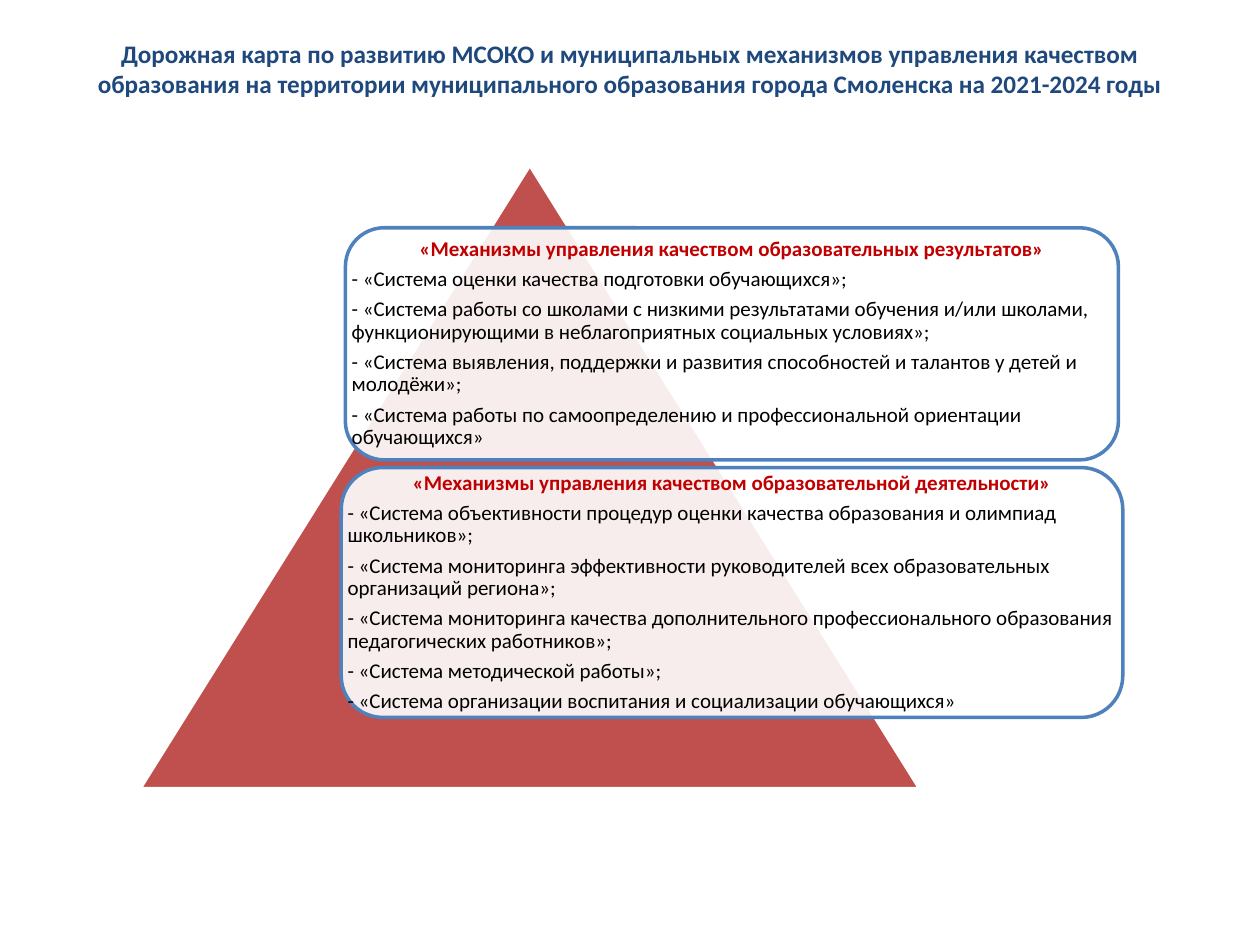
from pptx import Presentation
from pptx.dml.color import RGBColor
from pptx.enum.shapes import MSO_SHAPE
from pptx.enum.text import MSO_ANCHOR, MSO_AUTO_SIZE, PP_ALIGN
from pptx.oxml.ns import qn
from pptx.util import Pt
from lxml.etree import SubElement

HEADING = (
    "Дорожная карта по развитию МСОКО и муниципальных механизмов управления качеством "
    "образования на территории муниципального образования города Смоленска на 2021-2024 годы"
)
MECHANISMS = [
    {
        "box": (197.4, 130.2, 441.7, 132.6),
        "name": "«Механизмы управления качеством образовательных результатов»",
        "systems": [
            "«Система оценки качества подготовки обучающихся»;",
            "«Система работы со школами с низкими результатами обучения и/или школами, "
            "функционирующими в неблагоприятных социальных условиях»;",
            "«Система выявления, поддержки и развития способностей и талантов у детей и молодёжи»;",
            "«Система работы по самоопределению и профессиональной ориентации обучающихся»",
        ],
    },
    {
        "box": (195, 267.2, 446.6, 142.8),
        "name": "«Механизмы управления качеством образовательной деятельности»",
        "systems": [
            "«Система объективности процедур оценки качества образования и олимпиад школьников»;",
            "«Система мониторинга эффективности руководителей всех образовательных "
            "организаций региона»;",
            "«Система мониторинга качества дополнительного профессионального образования "
            "педагогических работников»;",
            "«Система методической работы»;",
            "«Система организации воспитания и социализации обучающихся»",
        ],
    },
]
HEADING_BOX = (36, 21.6, 648, 49.7)
PYRAMID_BOX = (79.9, 94.3, 445.7, 356.4)

THEME = {
    "font": "Calibri",
    "heading": RGBColor(0x1F, 0x49, 0x7D),
    "pyramid": RGBColor(0xC0, 0x50, 0x4D),
    "border": RGBColor(0x4F, 0x81, 0xBD),
    "mechanism": RGBColor(0xC0, 0x00, 0x00),
    "system": RGBColor(0, 0, 0),
    "white": RGBColor(0xFF, 0xFF, 0xFF),
    "heading_size": 14.4,
    "body_size": 12,
    "line_width": 2,
    "panel_opacity": 90,
}


def in_points(box):
    return [Pt(length) for length in box]


def write(paragraph, text, *, size, color, bold=False, align=PP_ALIGN.LEFT, spacing=1, after=0):
    paragraph.alignment = align
    paragraph.line_spacing = spacing
    paragraph.space_before = Pt(0)
    paragraph.space_after = Pt(after)
    run = paragraph.add_run()
    run.text = text
    run.font.name = THEME["font"]
    run.font.size = Pt(size)
    run.font.bold = bold
    run.font.color.rgb = color


def set_frame(frame, *, anchor, side, vertical):
    frame.word_wrap = True
    frame.auto_size = MSO_AUTO_SIZE.NONE
    frame.vertical_anchor = anchor
    frame.margin_left = frame.margin_right = Pt(side)
    frame.margin_top = frame.margin_bottom = Pt(vertical)


def add_figure(slide, preset, box, *, fill, line, opacity=100):
    figure = slide.shapes.add_shape(preset, *in_points(box))
    figure.shadow.inherit = False
    figure.fill.solid()
    figure.fill.fore_color.rgb = fill
    figure.line.color.rgb = line
    figure.line.width = Pt(THEME["line_width"])
    if opacity < 100:
        color = figure.fill._xPr.find(qn("a:solidFill"))[0]
        SubElement(color, qn("a:alpha")).set("val", str(opacity * 1000))


def add_heading(slide):
    heading = slide.shapes.title
    heading.left, heading.top, heading.width, heading.height = in_points(HEADING_BOX)
    set_frame(heading.text_frame, anchor=MSO_ANCHOR.TOP, side=7.2, vertical=0)
    write(heading.text_frame.paragraphs[0], HEADING, size=THEME["heading_size"],
          color=THEME["heading"], bold=True, align=PP_ALIGN.CENTER)


def add_mechanism(slide, mechanism):
    add_figure(slide, MSO_SHAPE.ROUNDED_RECTANGLE, mechanism["box"], fill=THEME["white"],
               line=THEME["border"], opacity=THEME["panel_opacity"])
    frame = slide.shapes.add_textbox(*in_points(mechanism["box"])).text_frame
    set_frame(frame, anchor=MSO_ANCHOR.MIDDLE, side=3.6, vertical=3.6)
    size = THEME["body_size"]
    rhythm = {"size": size, "spacing": 0.9, "after": size * 0.35}
    write(frame.paragraphs[0], mechanism["name"], color=THEME["mechanism"], bold=True,
          align=PP_ALIGN.CENTER, **rhythm)
    for system in mechanism["systems"]:
        write(frame.add_paragraph(), f"- {system}", color=THEME["system"], **rhythm)


def main():
    deck = Presentation()
    deck.slide_width, deck.slide_height = Pt(720), Pt(540)
    slide = deck.slides.add_slide(deck.slide_layouts[5])
    add_heading(slide)
    add_figure(slide, MSO_SHAPE.ISOSCELES_TRIANGLE, PYRAMID_BOX,
               fill=THEME["pyramid"], line=THEME["white"])
    for mechanism in MECHANISMS:
        add_mechanism(slide, mechanism)
    deck.save("out.pptx")


if __name__ == "__main__":
    main()
